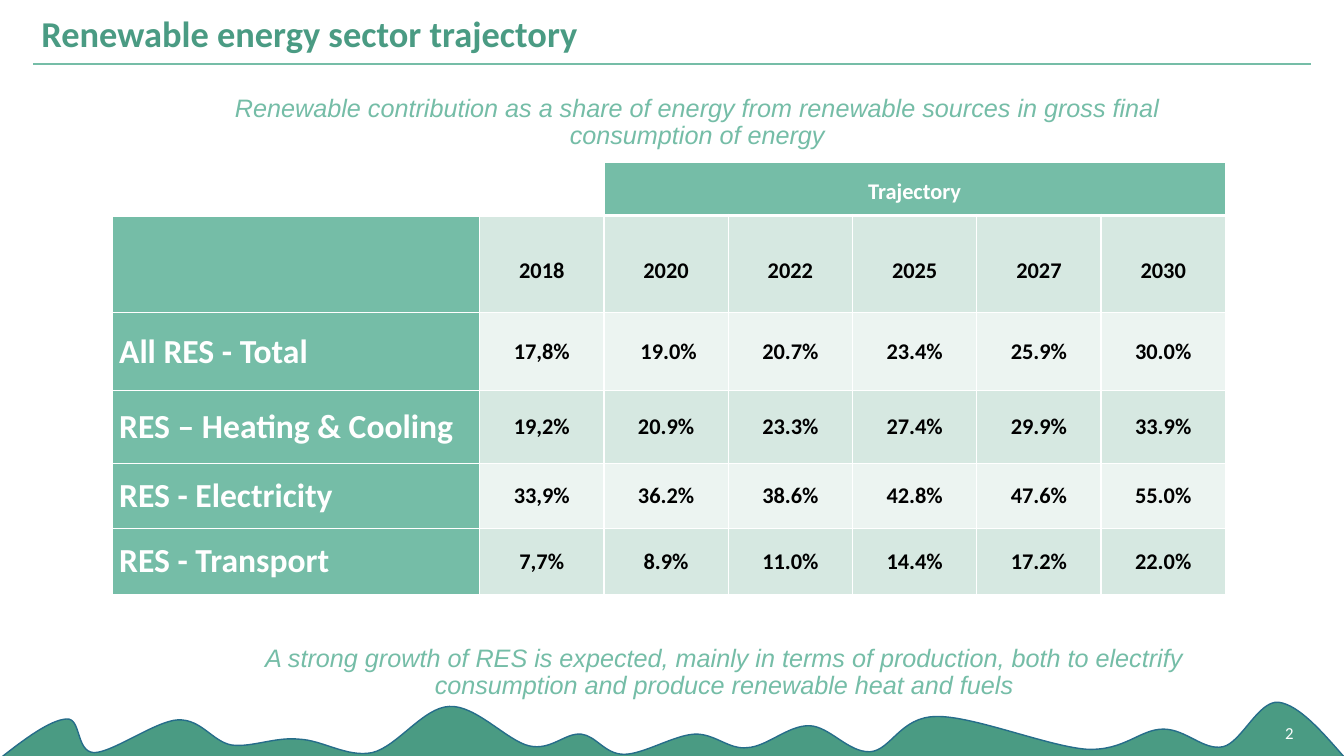
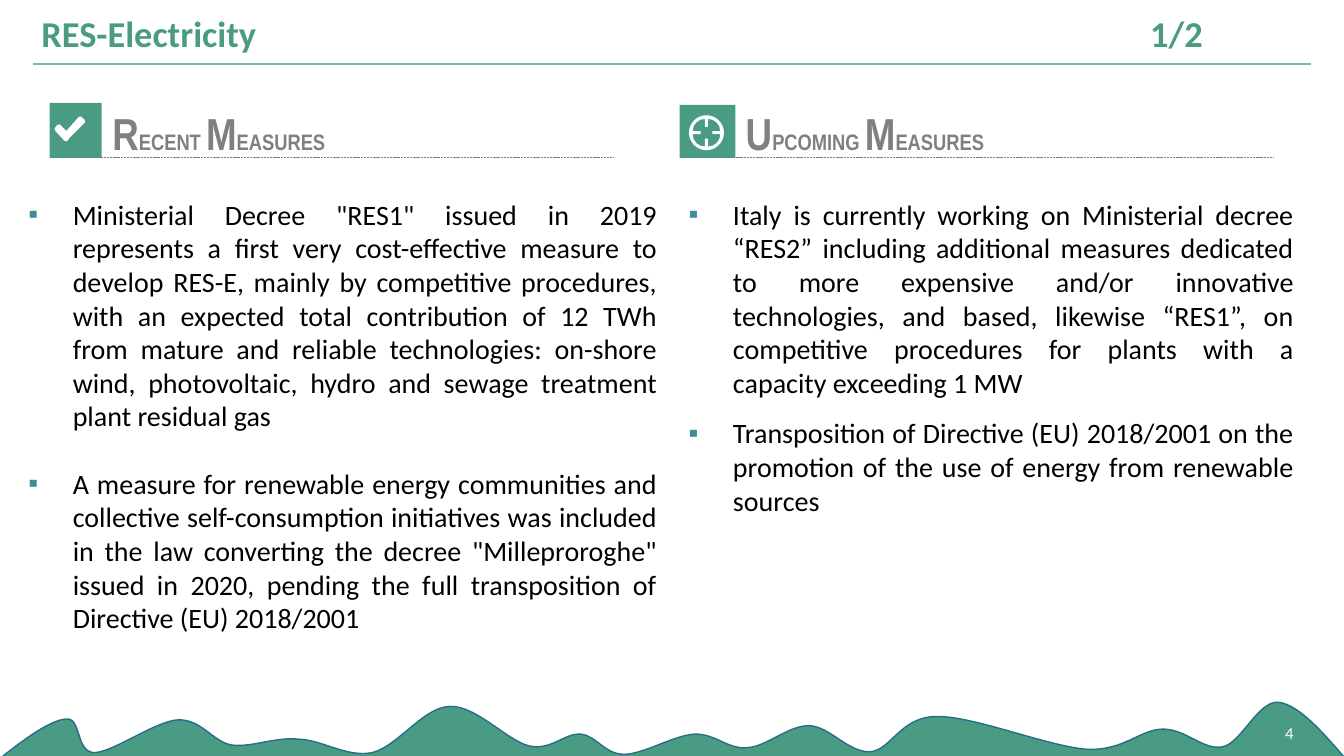
from pptx import Presentation
from pptx.dml.color import RGBColor
from pptx.enum.dml import MSO_LINE
from pptx.enum.shapes import MSO_CONNECTOR, MSO_SHAPE
from pptx.enum.text import MSO_ANCHOR, PP_ALIGN
from pptx.oxml.ns import qn
from pptx.util import Emu, Inches, Pt
from lxml.etree import SubElement

# Grid: 160 columns by 90 rows of square cells
COLS, ROWS = 160, 90
UNIT = Inches(7.5) / ROWS

# Colours and fonts
GREEN, MINT, BLUE, TEAL = "4A9B83", "75BDA7", "266D8A", "3A8F98"
GREY, WHITE, BLACK = "808080", "FFFFFF", "000000"
BANDS = "D6E8E1", "ECF4F1"
SANS, ARIAL, THIN = "Calibri", "Arial", "Arial Narrow"

# Wave: a start, then two handles and an end for each curve
WAVE = [
    (0.24, 90.1),
    (2.9, 88), (6, 85.7), (7.9, 85.6), (9.7, 85.4), (9, 89.5), (11.2, 89.6),
    (13.4, 89.6), (18.6, 85.8), (21.2, 85.7), (24, 85.6), (25.3, 88.3),
    (27.6, 88.7), (30, 89), (32.8, 87.7), (35.6, 88), (38.4, 88.1),
    (41.3, 90.2), (44.3, 89.6), (47.3, 88.9), (50.4, 84.2), (53.5, 84.1),
    (56.6, 83.9), (60.4, 88.2), (63, 88.8), (65.6, 89.4), (67.3, 87.2),
    (69.2, 87.4), (71, 87.6), (72, 89.8), (74.3, 89.8), (76.6, 89.8),
    (80.3, 87.5), (82.7, 87.4), (85.1, 87.3), (86.8, 89.3), (89, 89),
    (91.3, 88.9), (93.9, 86.3), (96.4, 86.4), (98.8, 86.5), (101, 89.6),
    (103.6, 89.5), (106.1, 89.3), (107.2, 85.3), (111.5, 85.3), (115.8, 85.2),
    (124.9, 88.9), (129.4, 89.2), (133.9, 89.4), (135.7, 86.8), (138.5, 86.8),
    (141.2, 86.8), (143.3, 89.4), (145.6, 88.9), (147.8, 88.4), (149.8, 83.4),
    (152.2, 83.6), (154.6, 83.9), (157.3, 87), (160, 90.1),
]
CHECK = [(10.1, 14.6), (8.3, 16.4), (8, 16.8), (7.7, 16.8), (6.6, 15.6),
         (6.5, 15.3), (6.8, 14.9), (7.1, 14.8), (7.9, 15.6), (9.4, 13.9),
         (9.7, 13.9), (10.1, 14.3)]

# Table content
YEARS = ["", "2018", "2020", "2022", "2025", "2027", "2030"]
SHARES = [
    ["All RES - Total", "17,8%", " 19.0%", "20.7%", "23.4%", "25.9%", "30.0%"],
    ["RES – Heating & Cooling", "19,2%", "20.9%", "23.3%", "27.4%", "29.9%",
     "33.9%"],
    ["RES - Electricity", "33,9%", "36.2%", "38.6%", "42.8%", "47.6%", "55.0%"],
    ["RES - Transport", "7,7%", "8.9%", "11.0%", "14.4%", "17.2%", "22.0%"],
]

# Bullet texts
RECENT = [
    'Ministerial Decree "RES1" issued in 2019 represents a first very '
    "cost-effective measure to develop RES-E, mainly by competitive "
    "procedures, with an expected total contribution of 12 TWh from mature "
    "and reliable technologies: on-shore wind, photovoltaic, hydro and sewage "
    "treatment plant residual gas",
    "A measure for renewable energy communities and collective "
    "self-consumption initiatives was included in the law converting the "
    'decree "Milleproroghe" issued in 2020, pending the full transposition of '
    "Directive (EU) 2018/2001",
]
COMING = [
    "Italy is currently working on Ministerial decree “RES2” including "
    "additional measures dedicated to more expensive and/or innovative "
    "technologies, and based, likewise “RES1”, on competitive procedures for "
    "plants with a capacity exceeding 1 MW",
    "Transposition of Directive (EU) 2018/2001 on the promotion of the use of "
    "energy from renewable sources",
]


def cells(*sizes):
    return [Emu(round(size * UNIT)) for size in sizes]


def tint(code):
    return RGBColor.from_string(code)


def paint(fill, code):
    fill.solid()
    fill.fore_color.rgb = tint(code)


# Lines and shapes
def line(slide, ends, color, width, dash=None):
    rule = slide.shapes.add_connector(MSO_CONNECTOR.STRAIGHT, *cells(*ends))
    rule.line.color.rgb, rule.line.width = tint(color), Pt(width)
    if dash:
        rule.line.dash_style = dash
    SubElement(rule._element.spPr, qn("a:effectLst"))


def dress(shape, fill, edge=None):
    shape.shadow.inherit = False
    paint(shape.fill, fill)
    if edge:
        shape.line.color.rgb, shape.line.width = tint(edge), Pt(1)
    else:
        shape.line.fill.background()


def block(slide, box, fill):
    shape = slide.shapes.add_shape(MSO_SHAPE.RECTANGLE, *cells(*box))
    dress(shape, fill)
    return shape


def bend(shape):
    """Turn each three line points into one curve."""
    nodes = list(shape._element.iter(qn("a:lnTo")))
    for spot in range(0, len(nodes), 3):
        road = nodes[spot].getparent()
        curve = SubElement(road, qn("a:cubicBezTo"))
        nodes[spot].addprevious(curve)
        for node in nodes[spot:spot + 3]:
            curve.append(node[0])
            road.remove(node)


def outline(slide, loops, fill, edge=None, close=True, curved=True):
    pen = None
    for loop in loops:
        first, *rest = [cells(*point) for point in loop]
        if pen:
            pen.move_to(*first)
        else:
            pen = slide.shapes.build_freeform(*first, scale=1.0)
        pen.add_line_segments(rest, close=close)
    shape = pen.convert_to_shape()
    dress(shape, fill, edge)
    if curved:
        bend(shape)


# Text
def write(para, text, size, color, font=SANS, bold=False, slant=False):
    run = para.add_run()
    run.text = text
    face = run.font
    face.size, face.name, face.bold, face.italic = Pt(size), font, bold, slant
    face.color.rgb = tint(color)


def frame(slide, box, anchor=MSO_ANCHOR.TOP):
    body = slide.shapes.add_textbox(*cells(*box)).text_frame
    body.word_wrap = True
    body.vertical_anchor = anchor
    return body


def remark(slide, box, text):
    para = frame(slide, box).paragraphs[0]
    para.alignment, para.line_spacing = PP_ALIGN.CENTER, 0.9
    write(para, text, 18, MINT, ARIAL, slant=True)


def bullets(slide, box, items, gap):
    body = block(slide, box, WHITE).text_frame
    body.word_wrap, body.vertical_anchor = True, MSO_ANCHOR.TOP
    for spot, item in enumerate(items):
        para = body.add_paragraph() if spot else body.paragraphs[0]
        para.alignment = PP_ALIGN.JUSTIFY
        para.space_before = Pt(gap if spot else 0)
        props = para._p.get_or_add_pPr()
        hang = Inches(0.44)
        props.set("marL", str(hang))
        props.set("indent", str(-hang))
        SubElement(SubElement(props, qn("a:buClr")), qn("a:srgbClr"), val=TEAL)
        SubElement(props, qn("a:buFont"), typeface=ARIAL)
        SubElement(props, qn("a:buChar"), char="▪")
        write(para, item, 20, BLACK)


# Shared parts: rule, wave, page number, title
def page(deck, title, number):
    slide = deck.slides.add_slide(deck.slide_layouts[6])
    line(slide, (3.95, 7.65, 156.1, 7.65), MINT, 1.5)
    outline(slide, [WAVE], GREEN, BLUE, close=False)
    para = frame(slide, (119.2, 84.8, 36, 4.8), MSO_ANCHOR.MIDDLE).paragraphs[0]
    para.alignment = PP_ALIGN.RIGHT
    write(para, number, 12, WHITE)
    para = frame(slide, (3.75, 1.8, 152.3, 5.3), MSO_ANCHOR.MIDDLE).paragraphs[0]
    para.line_spacing, para.space_after = 0.8, Pt(4)
    tabs = SubElement(para._p.get_or_add_pPr(), qn("a:tabLst"))
    SubElement(tabs, qn("a:tab"), pos=str(Inches(11)), algn="l")
    write(para, title, 26, GREEN, bold=True)
    return slide


# Table
def edges(cell, low):
    props = cell._tc.get_or_add_tcPr()
    for side, width in (("L", 1), ("R", 1), ("T", 1), ("B", low)):
        edge = SubElement(props, qn("a:ln" + side), w=str(Pt(width)))
        fill = SubElement(edge, qn("a:solidFill"))
        SubElement(fill, qn("a:srgbClr"), val=WHITE)


def label(cell, text, size, color, align, space=1):
    para = cell.text_frame.paragraphs[0]
    para.alignment, para.line_spacing = align, space
    write(para, text, size, color, bold=True)


def shares(slide):
    wide = [43.75] + [14.8] * 6
    high = [6.35, 11.6, 9.25, 8.65, 7.8, 7.8]
    box = cells(13.35, 19.3, sum(wide), sum(high))
    table = slide.shapes.add_table(len(high), len(wide), *box).table
    table.first_row = table.horz_banding = False
    for col, size in zip(table.columns, cells(*wide)):
        col.width = size
    for row, size in zip(table.rows, cells(*high)):
        row.height = size
    rows = [["", "", "Trajectory", "", "", "", ""], YEARS] + SHARES
    for r, row in enumerate(rows):
        for c, text in enumerate(row):
            cell = table.cell(r, c)
            edges(cell, 1 if r else 3)
            cell.vertical_anchor = MSO_ANCHOR.MIDDLE
            cell.margin_left = cell.margin_right = Inches(0.07)
            cell.margin_top, cell.margin_bottom = 0, Inches(0 if r else 0.08)
            if r == 0 and c < 2:
                cell.fill.background()
            else:
                paint(cell.fill, MINT if r == 0 or c == 0 else BANDS[(r - 1) % 2])
            if text and c == 0:
                label(cell, text, 24, WHITE, PP_ALIGN.LEFT)
            elif text:
                label(cell, text, 16, BLACK if r else WHITE, PP_ALIGN.CENTER,
                      1.5 if r < 2 else 1)
    table.cell(0, 2).merge(table.cell(0, 6))


# Heading with a badge, small capitals and a dashed rule
def heading(slide, badge, left, ends, words):
    line(slide, (ends[0], 18.7, ends[1], 18.7), GREY, 0.5, MSO_LINE.SQUARE_DOT)
    block(slide, badge, GREEN)
    para = frame(slide, (left, 11.9, 42.5, 7.7), MSO_ANCHOR.MIDDLE).paragraphs[0]
    for word in words:
        write(para, word[0], 32, GREY, THIN, bold=True)
        write(para, word[1:], 16, GREY, THIN, bold=True)


# Cross-hair: a disc and a notched hole, each made of four equal quarters
def target(slide, x, y):
    far, rim, near, half = 2.08, 1.65, 0.7, 0.18
    disc = [(0, -far), (0.55 * far, -far), (far, -0.55 * far), (far, 0)]
    arc = [(half, -rim), (1, -rim), (rim, -1), (rim, -half)]
    notch = [(near, -half)] * 3 + [(near, half)] * 3 + [(rim, half)] * 3
    loops = []
    for part in (disc, arc + notch):
        loop = part[:1]
        for _ in range(4):
            loop += part[1:]
            part = [(-b, a) for a, b in part]
        loops.append([(x + a, y + b) for a, b in loop])
    outline(slide, loops, WHITE)


def main():
    deck = Presentation()
    deck.slide_width, deck.slide_height = cells(COLS, ROWS)

    # Sector trajectory
    slide = page(deck, "Renewable energy sector trajectory", "2")
    shares(slide)
    remark(slide, (22.1, 10.8, 121.8, 7.6),
           "Renewable contribution as a share of energy from renewable sources "
           "in gross final consumption of energy")
    remark(slide, (25.2, 76.3, 122, 7.6),
           "A strong growth of RES is expected, mainly in terms of production, "
           "both to electrify consumption and produce renewable heat and fuels")

    # Electricity measures
    slide = page(deck, "RES-Electricity\t1/2", "4")
    bullets(slide, (2.2, 22.9, 77.2, 53.8), RECENT, 24)
    bullets(slide, (80.8, 22.9, 74.4, 42.8), COMING, 12)
    heading(slide, (5.9, 12.25, 6.2, 6.55), 12.2, (6.6, 73.1),
            ["RECENT ", "MEASURES"])
    outline(slide, [CHECK], WHITE, curved=False)
    heading(slide, (80.9, 12.5, 6.65, 6.3), 87.6, (82.8, 151.7),
            ["UPCOMING ", "MEASURES"])
    target(slide, 84.1, 15.8)

    deck.save("out.pptx")


if __name__ == "__main__":
    main()
